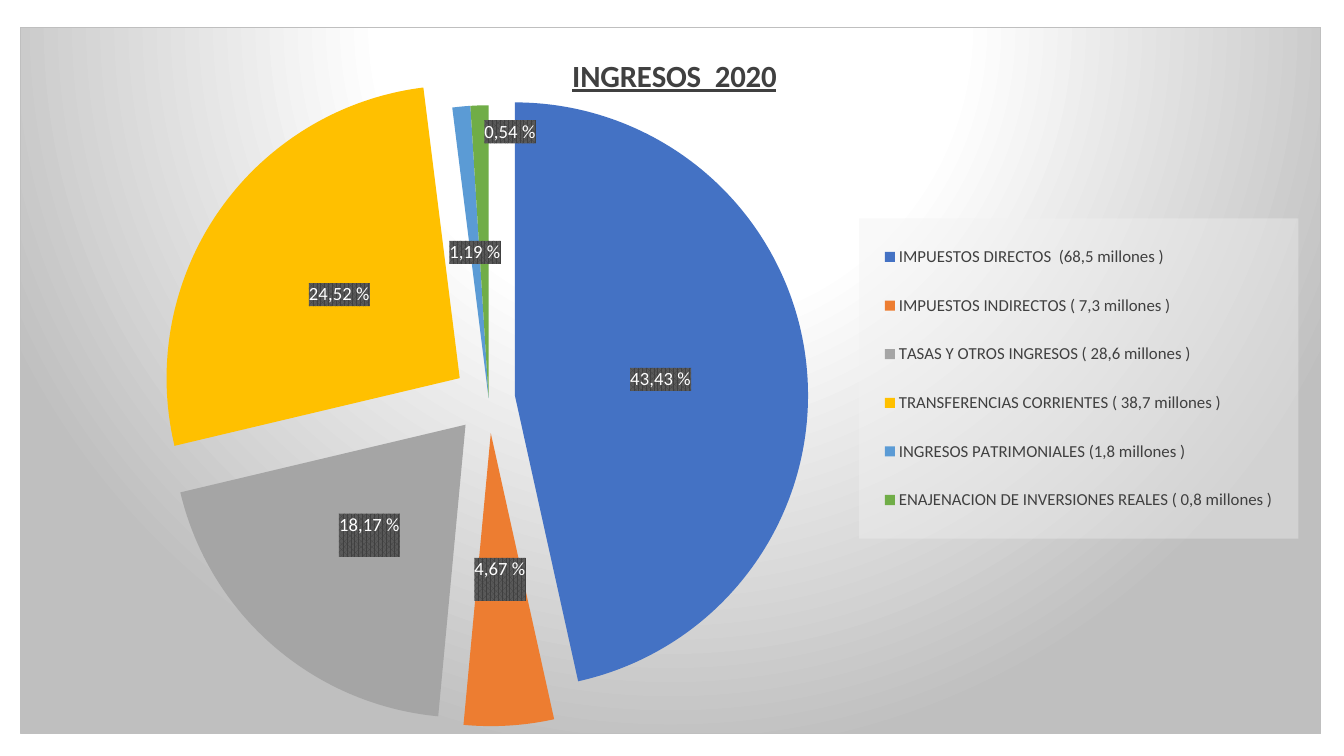
import pptx
import pptx.chart.data
import pptx.dml.color
import pptx.enum.chart
import pptx.oxml
import pptx.oxml.ns
import pptx.util
from dataclasses import dataclass
from typing import Any

RGB = pptx.dml.color.RGBColor
BLUE = RGB(0x44, 0x72, 0xC4)
ORANGE = RGB(0xED, 0x7D, 0x31)
GRAY = RGB(0xA5, 0xA5, 0xA5)
GOLD = RGB(0xFF, 0xC0, 0x00)
SKY = RGB(0x5B, 0x9B, 0xD5)
GREEN = RGB(0x70, 0xAD, 0x47)
WHITE = RGB(0xFF, 0xFF, 0xFF)
PALE = RGB(0xF2, 0xF2, 0xF2)
SILVER = RGB(0xBF, 0xBF, 0xBF)
DARK = RGB(0x40, 0x40, 0x40)
SLATE = RGB(0x59, 0x59, 0x59)
FACE = "Calibri"
WIDE = pptx.util.Inches(13.33)
HIGH = pptx.util.Inches(7.5)


@dataclass(frozen=True)
class Slice:
    name: str
    value: int
    label: str
    color: RGB
    burst: int = 0
    shift: tuple[float, ...] = ()


SLICES = (
    Slice("IMPUESTOS DIRECTOS\u00a0 (68,5 millones )", 47, "43,43 %", BLUE, 9),
    Slice("IMPUESTOS INDIRECTOS ( 7,3 millones )", 5, "4,67 %\n", ORANGE, 12),
    Slice("TASAS Y OTROS INGRESOS ( 28,6 millones )", 20, "18,17 %\n", GRAY, 12),
    Slice("TRANSFERENCIAS CORRIENTES ( 38,7 millones )", 27, "24,52 %", GOLD, 12),
    Slice("INGRESOS PATRIMONIALES (1,8 millones )", 1, "1,19 %", SKY),
    Slice("ENAJENACION DE INVERSIONES REALES ( 0,8 millones )", 1, "0,54 %", GREEN,
          shift=(0.02, -0.17)),
)


def node(tag: str, body: str = "", attrs: str = "") -> Any:
    names = pptx.oxml.ns.nsdecls("c", "a")
    return pptx.oxml.parse_xml(f"<c:{tag} {names} {attrs}>{body}</c:{tag}>")


def tint(color: RGB, extra: str = "") -> str:
    return f'<a:srgbClr val="{color}">{extra}</a:srgbClr>'


def layout(shares: tuple[float, ...], edge: bool = True, inner: bool = False) -> Any:
    body = '<c:layoutTarget val="inner"/>' if inner else ""
    if edge:
        body += '<c:xMode val="edge"/><c:yMode val="edge"/>'
    body += "".join(f'<c:{key} val="{share}"/>' for key, share in zip("xywh", shares))
    return node("layout", f"<c:manualLayout>{body}</c:manualLayout>")


def clear(parent: Any) -> None:
    for old in parent.xpath("c:layout"):
        parent.remove(old)


def write(frame: Any, text: str, *, size: float, color: RGB,
          bold: bool = False, under: bool = False) -> None:
    frame.text = text
    for para in frame.paragraphs:
        for font in [para.font] + [run.font for run in para.runs]:
            font.name = FACE
            font.size = pptx.util.Pt(size)
            font.bold = bold
            font.underline = under
            font.color.rgb = color


def add_pie(slide: Any) -> Any:
    data = pptx.chart.data.CategoryChartData()
    data.categories = [part.name for part in SLICES]
    data.add_series("Series 1", [part.value for part in SLICES])
    frame = slide.shapes.add_chart(
        pptx.enum.chart.XL_CHART_TYPE.PIE, int(WIDE * 0.015), int(HIGH * 0.036),
        int(WIDE * 0.968), int(HIGH * 0.935), data)
    return frame.chart


def style_slices(chart: Any) -> None:
    plot = chart.plots[0]
    plot.vary_by_categories = True
    series = plot.series[0]
    fill = (f'<a:pattFill prst="pct75"><a:fgClr>{tint(DARK)}</a:fgClr>'
            f'<a:bgClr>{tint(SLATE)}</a:bgClr></a:pattFill>')
    for index, part in enumerate(SLICES):
        point = series.points[index]
        point.format.fill.solid()
        point.format.fill.fore_color.rgb = part.color
        point.format.line.fill.background()
        shape = series._element.xpath(f"c:dPt[c:idx/@val={index}]/c:spPr")[0]
        shape.addprevious(node("explosion", attrs=f'val="{part.burst}"'))
        label = point.data_label
        write(label.text_frame, part.label, size=13.3, color=WHITE)
        label.position = pptx.enum.chart.XL_LABEL_POSITION.CENTER
        item = series._element.xpath(f"c:dLbls/c:dLbl[c:idx/@val={index}]")[0]
        text = item.xpath("c:tx")[0]
        text.addnext(node("spPr", fill))
        if part.shift:
            clear(item)
            text.addprevious(layout(part.shift, edge=False))


def style_frame(chart: Any) -> None:
    chart.font.name = FACE
    chart.font.size = pptx.util.Pt(10)
    stops = "".join(f'<a:gs pos="{pos}">{tint(color)}</a:gs>'
                    for pos, color in ((0, WHITE), (39000, WHITE), (100000, SILVER)))
    back = (f'<a:gradFill><a:gsLst>{stops}</a:gsLst><a:path path="circle">'
            '<a:fillToRect l="50000" t="-80000" r="50000" b="180000"/></a:path></a:gradFill>'
            f'<a:ln w="9525"><a:solidFill>{tint(SILVER)}</a:solidFill></a:ln>')
    root = chart._chartSpace
    root.xpath("c:txPr")[0].addprevious(node("spPr", back))
    area = root.xpath("c:chart/c:plotArea")[0]
    clear(area)
    area.insert(0, layout((0, 0.11, 0.72, 0.83), inner=True))


def style_title(chart: Any) -> None:
    chart.has_title = True
    title = chart.chart_title
    write(title.text_frame, "INGRESOS  2020", size=22, color=DARK, bold=True, under=True)
    title.include_in_layout = False
    item = title._element
    clear(item)
    item.xpath("c:tx")[0].addnext(layout((0.42, 0.03)))


def style_legend(chart: Any) -> None:
    chart.has_legend = True
    legend = chart.legend
    legend.position = pptx.enum.chart.XL_LEGEND_POSITION.RIGHT
    legend.include_in_layout = False
    legend.font.name = FACE
    legend.font.size = pptx.util.Pt(12)
    legend.font.color.rgb = DARK
    item = legend._element
    clear(item)
    item.xpath("c:overlay")[0].addprevious(layout((0.645, 0.27, 0.338, 0.454)))
    veil = tint(PALE, '<a:alpha val="39000"/>')
    item.xpath("c:txPr")[0].addprevious(node("spPr", f"<a:solidFill>{veil}</a:solidFill>"))


def main() -> None:
    deck = pptx.Presentation()
    deck.slide_width = WIDE
    deck.slide_height = HIGH
    slide = deck.slides.add_slide(deck.slide_layouts[6])
    chart = add_pie(slide)
    style_slices(chart)
    style_frame(chart)
    style_title(chart)
    style_legend(chart)
    deck.save("out.pptx")


if __name__ == "__main__":
    main()
